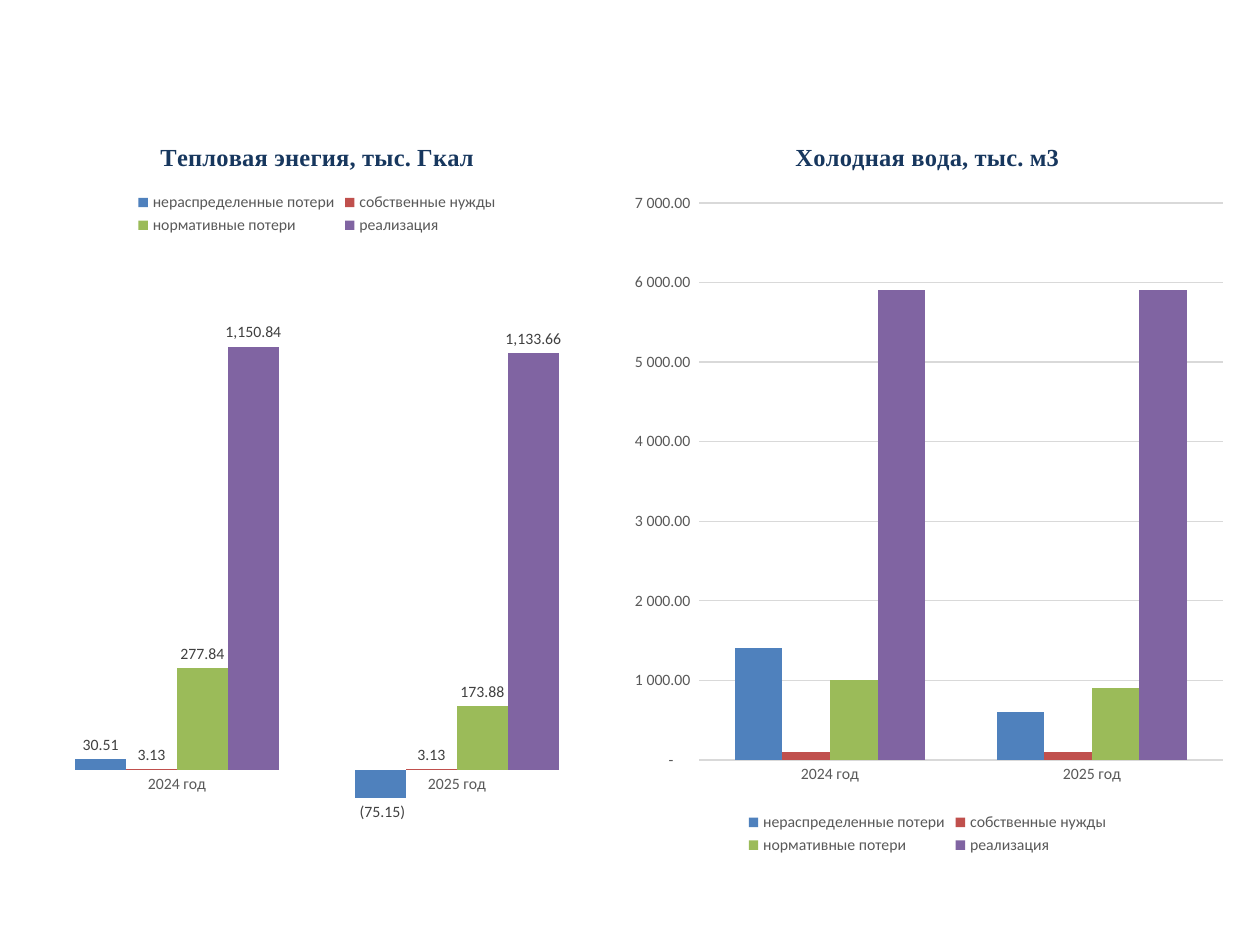
"""Build a slide with two clustered column charts of heat and cold water."""
from lxml import etree
from pptx import Presentation, util as u
from pptx.chart.data import CategoryChartData
from pptx.dml.color import RGBColor
from pptx.enum import chart as ch
from pptx.oxml.ns import qn

PX_PER_INCH = 126
NAVY = RGBColor(0x17, 0x37, 0x5E)
BLACK = RGBColor(0, 0, 0)
GREY = RGBColor(0x59, 0x59, 0x59)
LABEL_GREY = RGBColor(0x40, 0x40, 0x40)
GRID_GREY = RGBColor(0xD9, 0xD9, 0xD9)
BLUE = RGBColor(0x4F, 0x81, 0xBD)
RED = RGBColor(0xC0, 0x50, 0x4D)
GREEN = RGBColor(0x9B, 0xBB, 0x59)
PURPLE = RGBColor(0x80, 0x64, 0xA2)

YEARS = ["2024 год", "2025 год"]
SERIES = [
    ("нераспределенные потери", BLUE),
    ("собственные нужды", RED),
    ("нормативные потери", GREEN),
    ("реализация", PURPLE),
]
HEAT = [(30.51, -75.15), (3.13, 3.13), (277.84, 173.88), (1150.84, 1133.66)]
WATER = [(1400, 600), (100, 100), (1000, 900), (5900, 5900)]
COMMA_FORMAT = '_(* #,##0.00_);_(* \\(#,##0.00\\);_(* "-"??_);_(@_)'
SPACE_FORMAT = '_(* #\\ ##0.00_);_(* \\(#\\ ##0.00\\);_(* "-"??_);_(@_)'


def px(length):
    return u.Emu(round(length * u.Inches(1) / PX_PER_INCH))


def set_font(font, size, color, name="Calibri", bold=False):
    font.size, font.name, font.bold = u.Pt(size), name, bold
    font.color.rgb = color


def place_part(chart, tag, frame, area, inner=False):
    """Fix the place of a chart part, given in slide px, inside its frame."""
    part = chart.element.find(".//" + qn(tag))
    for old in part.findall(qn("c:layout")):
        part.remove(old)
    layout = etree.Element(qn("c:layout"))
    manual = etree.SubElement(layout, qn("c:manualLayout"))
    left, top, width, height = frame
    fractions = {"x": (area[0] - left) / width, "y": (area[1] - top) / height}
    if len(area) == 4:
        fractions.update(w=area[2] / width, h=area[3] / height)
    settings = [("layoutTarget", "inner")] if inner else []
    settings += [("xMode", "edge"), ("yMode", "edge")]
    settings += [(key, f"{value:.4f}") for key, value in fractions.items()]
    for key, value in settings:
        etree.SubElement(manual, qn("c:" + key)).set("val", value)
    part.insert(0 if inner else 1, layout)


def add_columns(page, frame, values, number_format):
    data = CategoryChartData(number_format=number_format)
    data.categories = YEARS
    for (name, _), numbers in zip(SERIES, values):
        data.add_series(name, numbers)
    chart = page.shapes.add_chart(
        ch.XL_CHART_TYPE.COLUMN_CLUSTERED, *map(px, frame), data).chart
    set_font(chart.font, 10, BLACK)
    plot = chart.plots[0]
    plot.gap_width, plot.overlap, plot.vary_by_categories = 150, 0, False
    for series, (_, color) in zip(plot.series, SERIES):
        series.invert_if_negative = False
        series.format.fill.solid()
        series.format.fill.fore_color.rgb = color
    return chart


def add_title(chart, words, frame, area):
    para = chart.chart_title.text_frame.paragraphs[0]
    span = para.add_run()
    span.text = words
    set_font(span.font, 14, NAVY, "Times New Roman", True)
    chart.chart_title.include_in_layout = False
    place_part(chart, "c:title", frame, area)


def add_legend(chart, position, frame, area):
    chart.has_legend = True
    chart.legend.position = position
    chart.legend.include_in_layout = False
    set_font(chart.legend.font, 9, GREY)
    place_part(chart, "c:legend", frame, area)


def style_axes(chart, low, high, step, number_format):
    for axis in (chart.category_axis, chart.value_axis):
        axis.major_tick_mark = axis.minor_tick_mark = ch.XL_TICK_MARK.NONE
        axis.format.line.fill.background()
        set_font(axis.tick_labels.font, 9, GREY)
    axis = chart.value_axis
    axis.minimum_scale, axis.maximum_scale, axis.major_unit = low, high, step
    axis.tick_labels.number_format = number_format
    axis.tick_labels.number_format_is_linked = False


def show_labels(chart, number_format):
    for series in chart.plots[0].series:
        labels = series.data_labels
        labels.show_value = True
        labels.number_format = number_format
        labels.number_format_is_linked = False
        labels.position = ch.XL_LABEL_POSITION.OUTSIDE_END
        set_font(labels.font, 9, LABEL_GREY)


def add_heat_chart(page):
    frame = (25, 116, 585, 745)
    chart = add_columns(page, frame, HEAT, COMMA_FORMAT)
    add_title(chart, "Тепловая энегия, тыс. Гкал", frame, (156, 137))
    add_legend(chart, ch.XL_LEGEND_POSITION.TOP, frame, (133, 189, 368, 50))
    style_axes(chart, -200, 1400, 200, COMMA_FORMAT)
    chart.value_axis.has_major_gridlines = False
    chart.value_axis.visible = False
    show_labels(chart, COMMA_FORMAT)
    place_part(chart, "c:plotArea", frame, (37, 255, 560, 589), True)


def add_water_chart(page):
    frame = (620, 116, 616, 745)
    chart = add_columns(page, frame, WATER, SPACE_FORMAT)
    add_title(chart, "Холодная вода, тыс. м3", frame, (791, 137))
    add_legend(chart, ch.XL_LEGEND_POSITION.BOTTOM, frame, (743, 809, 369, 50))
    style_axes(chart, 0, 7000, 1000, SPACE_FORMAT)
    grid = chart.value_axis.major_gridlines.format.line
    grid.color.rgb, grid.width = GRID_GREY, u.Pt(0.75)
    place_part(chart, "c:plotArea", frame, (699, 203, 524, 557), True)


def main():
    deck = Presentation()
    deck.slide_width, deck.slide_height = u.Inches(10), u.Inches(7.5)
    page = deck.slides.add_slide(deck.slide_layouts[6])
    add_heat_chart(page)
    add_water_chart(page)
    deck.save("out.pptx")


if __name__ == "__main__":
    main()
